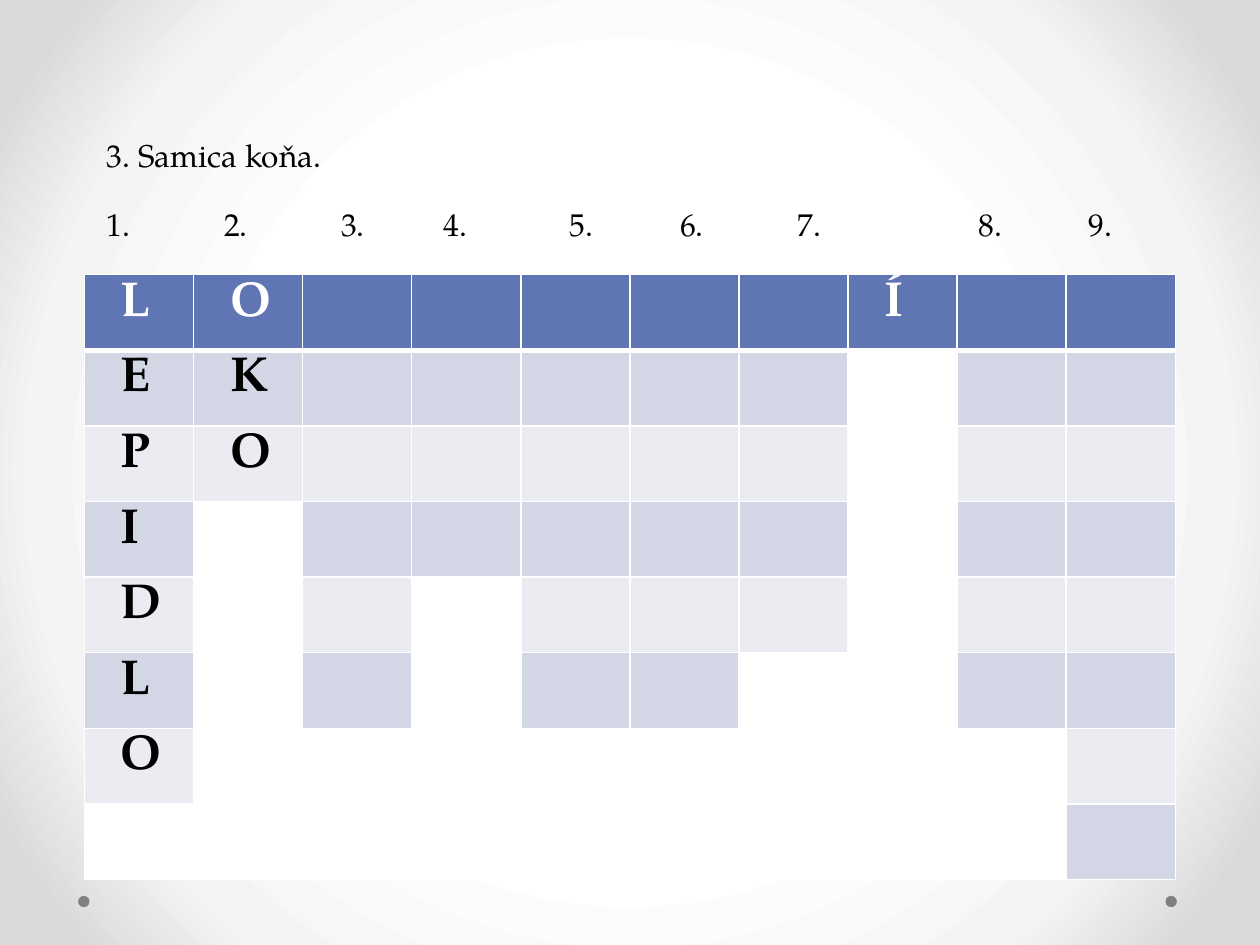
from dataclasses import dataclass

from lxml import etree
from pptx import Presentation
from pptx import util as u
from pptx.dml.color import RGBColor
from pptx.enum import shapes, text
from pptx.oxml import parse_xml
from pptx.oxml.ns import nsdecls, qn


@dataclass(frozen=True)
class Theme:
    font: str = "TeX Gyre Pagella"
    body: int = 18
    letter: int = 28
    ink: str = "000000"
    white: str = "FFFFFF"
    header: str = "6076B4"
    bands: tuple = ("EAECF2", "D2D6E5")
    dot: str = "808080"
    glow: tuple = ((50, "FFFFFF"), (76, "F4F4F4"), (92, "DADADA"))


THEME = Theme()
COLUMN_LENGTHS = (7, 3, 6, 4, 6, 6, 5, 1, 6, 8)
WORDS = {0: "LEPIDLO", 1: "OKO", 7: "Í"}
NUMBER_TABS = (0.93, 1.86, 2.67, 3.67, 4.55, 5.48, 6.92, 7.79)


def write(p, words, size, color, bold=False):
    r = p.add_run()
    r.text = words
    for name, value in dict(name=THEME.font, size=u.Pt(size), bold=bold).items():
        setattr(r.font, name, value)
    r.font.color.rgb = RGBColor.from_string(color)


def paint_background(slide):
    stops = "".join(
        f'<a:gs pos="{pos * 1000}"><a:srgbClr val="{color}"/></a:gs>'
        for pos, color in THEME.glow)
    bg = parse_xml(
        f'<p:bg {nsdecls("p", "a")}><p:bgPr><a:gradFill rotWithShape="1">'
        f'<a:gsLst>{stops}</a:gsLst><a:path path="circle">'
        '<a:fillToRect l="50000" t="50000" r="50000" b="50000"/></a:path>'
        '</a:gradFill><a:effectLst/></p:bgPr></p:bg>')
    slide.element.cSld.insert(0, bg)


def add_dots(slide, lefts, top, size):
    for left in lefts:
        s = slide.shapes.add_shape(shapes.MSO_SHAPE.OVAL, u.Inches(left),
                                   u.Inches(top), u.Inches(size), u.Inches(size))
        s.shadow.inherit = False
        s.fill.solid()
        s.fill.fore_color.rgb = RGBColor.from_string(THEME.dot)
        s.line.fill.background()


def add_line_of_text(slide, box, words, tabs=()):
    tf = slide.shapes.add_textbox(*map(u.Inches, box)).text_frame
    tf.word_wrap = False
    tf.auto_size = text.MSO_AUTO_SIZE.SHAPE_TO_FIT_TEXT
    p = tf.paragraphs[0]
    write(p, words, THEME.body, THEME.ink)
    if tabs:
        tab_list = etree.SubElement(p._p.get_or_add_pPr(), qn("a:tabLst"))
        for pos in tabs:
            etree.SubElement(tab_list, qn("a:tab"), pos=str(u.Inches(pos)), algn="l")


def set_borders(cell, widths):
    tc_pr = cell._tc.get_or_add_tcPr()
    for i, (side, width) in enumerate(widths.items()):
        tc_pr.insert(i, parse_xml(
            f'<a:{side} {nsdecls("a")} w="{u.Pt(width)}"><a:solidFill>'
            f'<a:srgbClr val="{THEME.white}"/></a:solidFill></a:{side}>'))


def add_crossword(slide, box):
    n_rows, n_cols = max(COLUMN_LENGTHS), len(COLUMN_LENGTHS)
    left, top, width, height = map(u.Inches, box)
    table = slide.shapes.add_table(n_rows, n_cols, left, top, width, height).table
    for column in table.columns:
        column.width = width // n_cols
    for row in table.rows:
        row.height = height // n_rows

    for y in range(n_rows):
        for x, length in enumerate(COLUMN_LENGTHS):
            cell = table.cell(y, x)
            cell.margin_left = u.Inches(0.29)
            if y >= length:
                color = THEME.white
            else:
                color = THEME.bands[y % 2] if y else THEME.header
            cell.fill.solid()
            cell.fill.fore_color.rgb = RGBColor.from_string(color)
            # The header row is set off by a thicker rule
            set_borders(cell, dict(lnL=1, lnR=1, lnT=3 if y == 1 else 1,
                                   lnB=1 if y else 3))
            letter = WORDS.get(x, "")[y:y + 1]
            if letter:
                write(cell.text_frame.paragraphs[0], letter, THEME.letter,
                      THEME.ink if y else THEME.white, bold=True)


def main():
    prs = Presentation()
    prs.slide_width, prs.slide_height = u.Inches(10), u.Inches(7.5)
    slide = prs.slides.add_slide(prs.slide_layouts[6])

    # Backdrop
    paint_background(slide)
    add_dots(slide, (9.25, 0.62), 7.11, 0.09)

    # Crossword grid, column numbers and clue
    add_crossword(slide, (0.67, 2.18, 8.66, 4.8))
    numbers = "\t".join(f"{n}." for n in range(1, 10))
    add_line_of_text(slide, (0.75, 1.58, 8.47, 0.4), numbers, NUMBER_TABS)
    add_line_of_text(slide, (0.75, 1.03, 1.93, 0.4), "3. Samica koňa.")

    prs.save("out.pptx")


if __name__ == "__main__":
    main()
